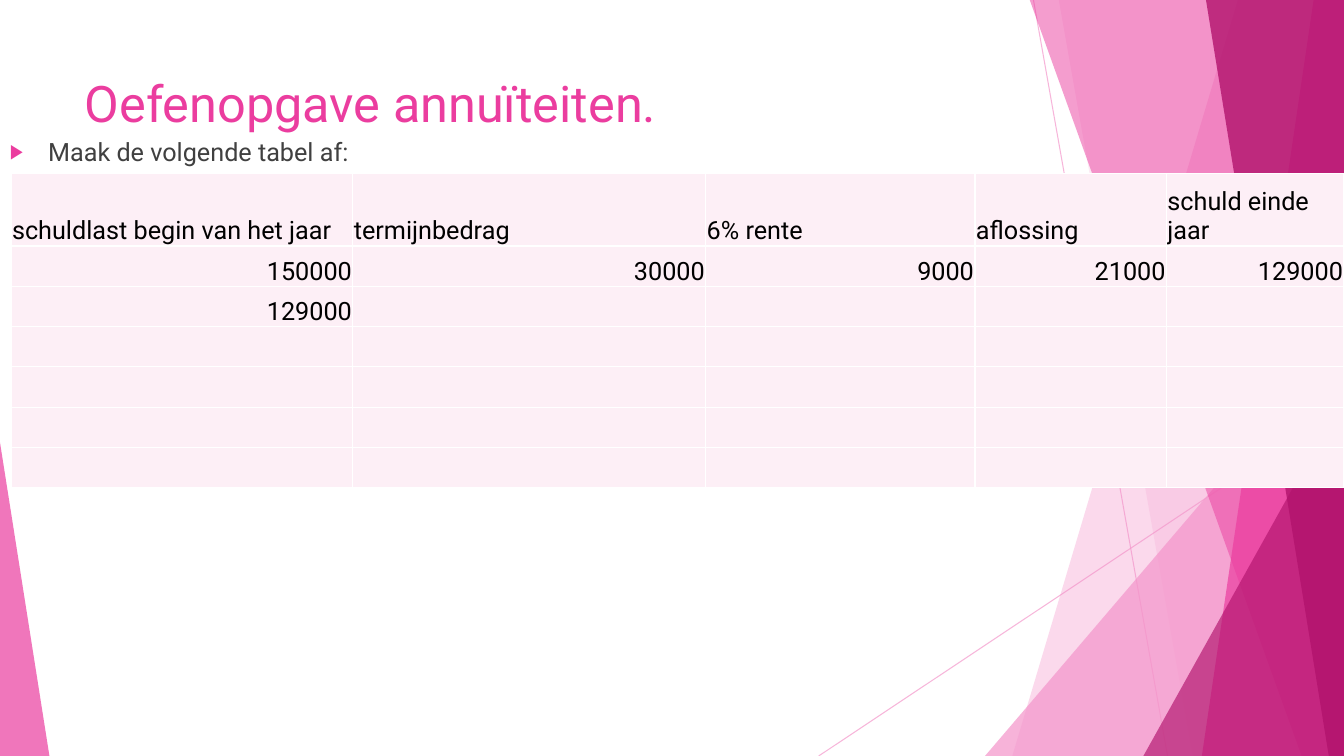
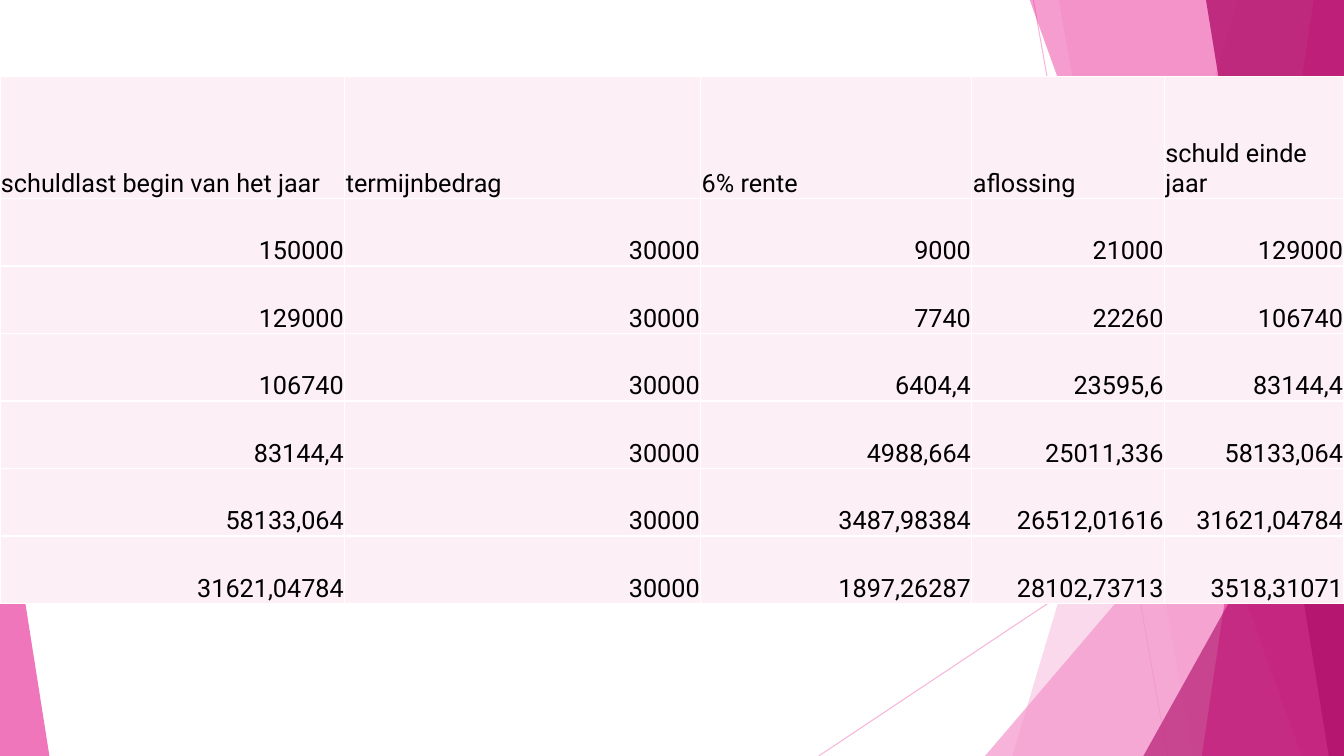
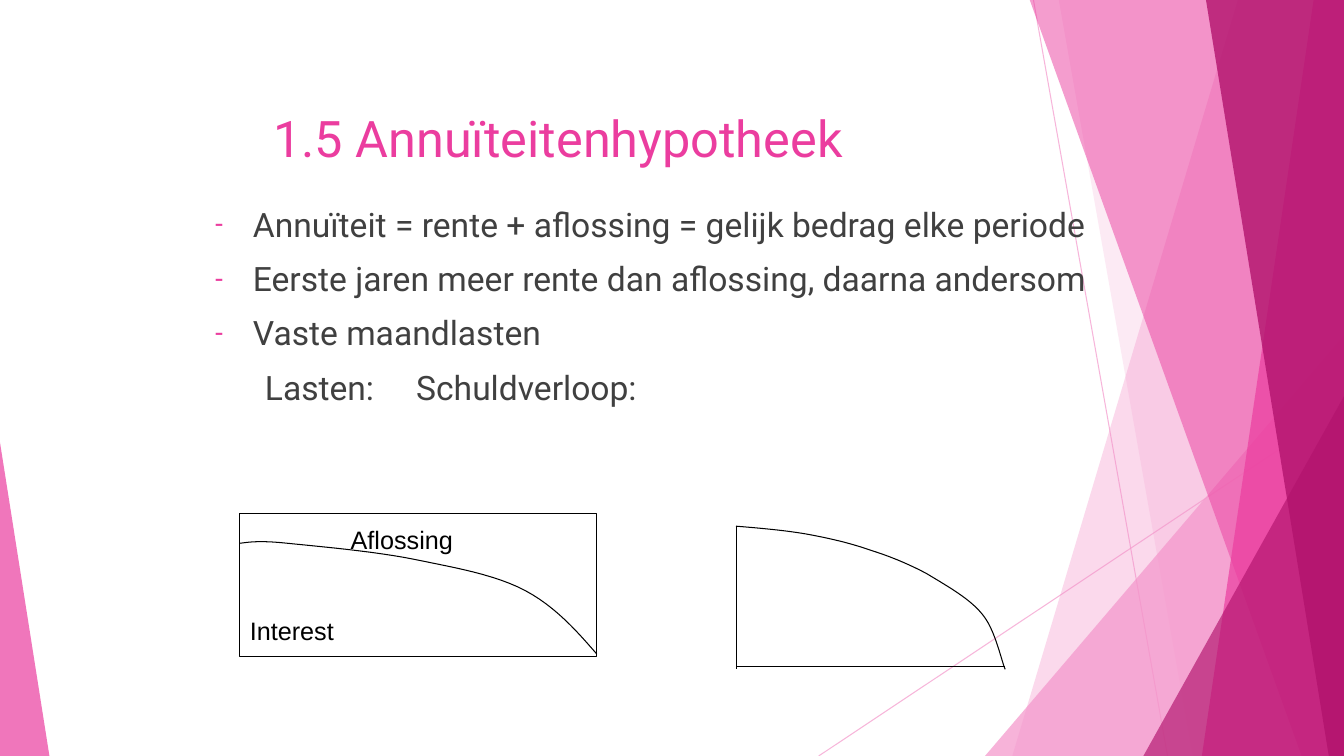
"""Build three slides about annuity loans and mortgages."""
import lxml.etree
import pptx
import pptx.dml.color
import pptx.enum.shapes
import pptx.enum.text
import pptx.oxml.ns
import pptx.util

Inches, Pt = pptx.util.Inches, pptx.util.Pt
qn, add = pptx.oxml.ns.qn, lxml.etree.SubElement
Align, Anchor = pptx.enum.text.PP_ALIGN, pptx.enum.text.MSO_ANCHOR
Shape = pptx.enum.shapes.MSO_SHAPE
PINK, ROSE, PLUM, PALE = "EB3D9F", "F496CB", "B2136D", "FDEFF6"
GREY, BLACK, WHITE = "404040", "000000", "FFFFFF"
WIDE, HIGH = 13.33, 7.5


def tint(fill, color):
    fill.solid()
    fill.fore_color.rgb = pptx.dml.color.RGBColor.from_string(color)


def write(para, text, size=18, font="Roboto", color=BLACK, align=Align.LEFT,
          before=0, left=0, hang=0, bullet=None, tabs=()):
    run = para.add_run()
    run.text = text
    run.font.size, run.font.name = Pt(size), font
    tint(run.font.fill, color)
    para.alignment, para.space_before = align, Pt(before)
    props = para._p.get_or_add_pPr()
    props.set("marL", str(Inches(left)))
    props.set("indent", str(Inches(-hang)))
    if bullet:
        add(add(props, qn("a:buClr")), qn("a:srgbClr"), val=PINK)
        add(props, qn("a:buSzPct"), val="80000")
        add(props, qn("a:buFont"), typeface="Arial")
        add(props, qn("a:buChar"), char=bullet)
    if tabs:
        stops = add(props, qn("a:tabLst"))
        for stop in tabs:
            add(stops, qn("a:tab"), pos=str(Inches(stop)), algn="l")


deck = pptx.Presentation()
deck.slide_width, deck.slide_height = Inches(WIDE), Inches(HIGH)
task, answer, loan = [deck.slides.add_slide(deck.slide_layouts[n]) for n in (5, 6, 5)]

for slide, color, ends in [
    (answer, ROSE, (10.25, 0, 11.58, HIGH)),
    (answer, ROSE, (WIDE, 4.03, 8.12, HIGH)),
    (loan, BLACK, (7.3, 5.22, 7.3, 6.64)),
    (loan, BLACK, (7.3, 6.61, 9.97, 6.61)),
]:
    line = slide.shapes.add_connector(
        pptx.enum.shapes.MSO_CONNECTOR.STRAIGHT, *map(Inches, ends))
    line.line.width = Pt(0.75)
    tint(line.line.fill, color)
    add(line.element.spPr, qn("a:effectLst"))
    if color == ROSE:
        add(next(line.element.iter(qn("a:srgbClr"))), qn("a:alpha"), val="70000")

for kind, place, color, alpha in [
    ("band", (12.28, 10.04), ROSE, 36),
    ("band", (10.5, 11.83), ROSE, 20),
    ("peak", (9.77, 3.33, 3.56, 1), ROSE, 72),
    ("band", (10.21, 12.91), PINK, 50),
    ("band", (13.03, 11.92), PINK, 70),
    ("band", (11.96, 13.18), PLUM, 80),
    ("peak", (11.34, 3.93, 1.99, 1), PLUM, 66),
    ("peak", (0, 4.39, 0.49, 0), PINK, 70),
]:
    if kind == "band":
        high, low = place
        path = answer.shapes.build_freeform(Inches(high), Inches(-0.01))
        path.add_line_segments([(Inches(x), Inches(y)) for x, y in
                                [(WIDE, -0.01), (WIDE, HIGH), (low, HIGH)]])
        facet = path.convert_to_shape()
    else:
        left, top, width, tip = place
        facet = answer.shapes.add_shape(
            Shape.ISOSCELES_TRIANGLE, *map(Inches, (left, top, width, HIGH - top)))
        facet.adjustments[0] = tip
    facet.shadow.inherit = False
    facet.line.fill.background()
    tint(facet.fill, color)
    add(next(facet.element.iter(qn("a:srgbClr"))), qn("a:alpha"), val=str(alpha * 1000))

for number, facet in enumerate(list(answer.shapes), 100):
    next(facet.element.iter(qn("p:cNvPr"))).set("id", str(number))
    deck.slide_master.shapes.element.append(facet.element)

for slide, text, place in [
    (task, "Oefenopgave annuïteiten.", (0.74, 0.67, 9.4, 1.44)),
    (loan, "1.5 Annuïteitenhypotheek", (2.61, 1.01, 6.94, 0.78)),
]:
    title = slide.shapes.title
    title.left, title.top, title.width, title.height = map(Inches, place)
    title.text_frame.vertical_anchor = Anchor.TOP
    title.text_frame.auto_size = pptx.enum.text.MSO_AUTO_SIZE.NONE
    write(title.text_frame.paragraphs[0], text, size=36, color=PINK)

dash = dict(left=0.38, hang=0.38, bullet="-")
for slide, place, size, lines in [
    (task, (0, 1.3, 10.14, 5.3), 18,
     [("Maak de volgende tabel af:", dict(dash, bullet="▶"))]),
    (loan, (2.03, 1.97, 9.64, 5.16), 24,
     [("Annuïteit = rente + aflossing = gelijk bedrag elke periode", dash),
      ("Eerste jaren meer rente dan aflossing, daarna andersom", dash),
      ("Vaste maandlasten", dash),
      ("\tLasten:\tSchuldverloop:", dict(tabs=(0.87, 5.87)))]),
]:
    frame = slide.shapes.add_textbox(*map(Inches, place)).text_frame
    frame.word_wrap = True
    for n, (text, style) in enumerate(lines):
        para = frame.add_paragraph() if n else frame.paragraphs[0]
        write(para, text, size=size, color=GREY, before=10, **style)

head = ["schuldlast begin van het jaar", "termijnbedrag", "6% rente",
        "aflossing", "schuld einde jaar"]
years = [
    "150000 30000 9000 21000 129000",
    "129000 30000 7740 22260 106740",
    "106740 30000 6404,4 23595,6 83144,4",
    "83144,4 30000 4988,664 25011,336 58133,064",
    "58133,064 30000 3487,98384 26512,01616 31621,04784",
    "31621,04784 30000 1897,26287 28102,73713 3518,31071",
]
for slide, place, widths, tall, low, rows in [
    (task, (0.11, 1.72, 13.23, 3.09), (3.39, 3.5, 2.67, 1.9, 1.76), 0.72, 0.4,
     [years[0], "129000", "", "", "", ""]),
    (answer, (0, 0.76, 13.33, 5.24), (3.42, 3.53, 2.69, 1.91, 1.78), 1.21, 0.67, years),
]:
    grid = slide.shapes.add_table(7, 5, *map(Inches, place)).table
    grid.first_row = grid.horz_banding = False
    for column, width in zip(grid.columns, widths):
        column.width = Inches(width)
    for r, values in enumerate([head] + [row.split() for row in rows]):
        grid.rows[r].height = Inches(low if r else tall)
        for c in range(5):
            cell = grid.cell(r, c)
            cell.margin_left = cell.margin_right = cell.margin_top = Inches(0.01)
            cell.margin_bottom = 0
            cell.vertical_anchor = Anchor.BOTTOM
            tint(cell.fill, PALE)
            props = cell._tc.get_or_add_tcPr()
            for n, side in enumerate("LRTB"):
                edge = add(props, qn("a:ln" + side), w=str(Pt(1)))
                add(add(edge, qn("a:solidFill")), qn("a:srgbClr"), val=WHITE)
                props.insert(n, edge)
            if c < len(values):
                write(cell.text_frame.paragraphs[0], values[c],
                      align=Align.RIGHT if r else Align.LEFT)

costs = loan.shapes.add_shape(Shape.RECTANGLE, *map(Inches, (2.38, 5.09, 3.54, 1.42)))
costs.shadow.inherit = False
costs.fill.background()
costs.line.width = Pt(0.75)
tint(costs.line.fill, BLACK)
frame = costs.text_frame
frame.word_wrap, frame.vertical_anchor = True, Anchor.MIDDLE
write(frame.paragraphs[0], "Aflossing", font="Arial", left=1)
write(frame.add_paragraph(), "Interest", font="Arial", before=43.5)

for knots in [
    [(2.38, 5.39), (2.47, 5.38), (2.56, 5.36), (2.85, 5.39), (3.14, 5.42),
     (3.72, 5.47), (4.11, 5.55), (4.5, 5.63), (4.91, 5.7), (5.21, 5.86),
     (5.51, 6.02), (5.72, 6.26), (5.92, 6.49)],
    [(7.3, 5.22), (7.54, 5.24), (7.78, 5.26), (8.01, 5.3), (8.23, 5.34),
     (8.44, 5.39), (8.64, 5.46), (8.83, 5.52), (9, 5.59), (9.19, 5.69),
     (9.37, 5.8), (9.61, 5.93), (9.74, 6.09), (9.87, 6.24), (9.93, 6.55),
     (9.97, 6.64)],
]:
    points = []
    for n in range(0, len(knots) - 1, 3):
        for step in range(1, 13):
            t = step / 12
            parts = ((1 - t) ** 3, 3 * t * (1 - t) ** 2, 3 * t ** 2 * (1 - t), t ** 3)
            points.append([Inches(sum(part * knot[axis] for part, knot
                                      in zip(parts, knots[n:n + 4])))
                           for axis in (0, 1)])
    path = loan.shapes.build_freeform(*map(Inches, knots[0]))
    path.add_line_segments(points, close=False)
    curve = path.convert_to_shape()
    curve.shadow.inherit = False
    curve.fill.background()
    curve.line.width = Pt(0.75)
    tint(curve.line.fill, BLACK)

deck.save("out.pptx")
